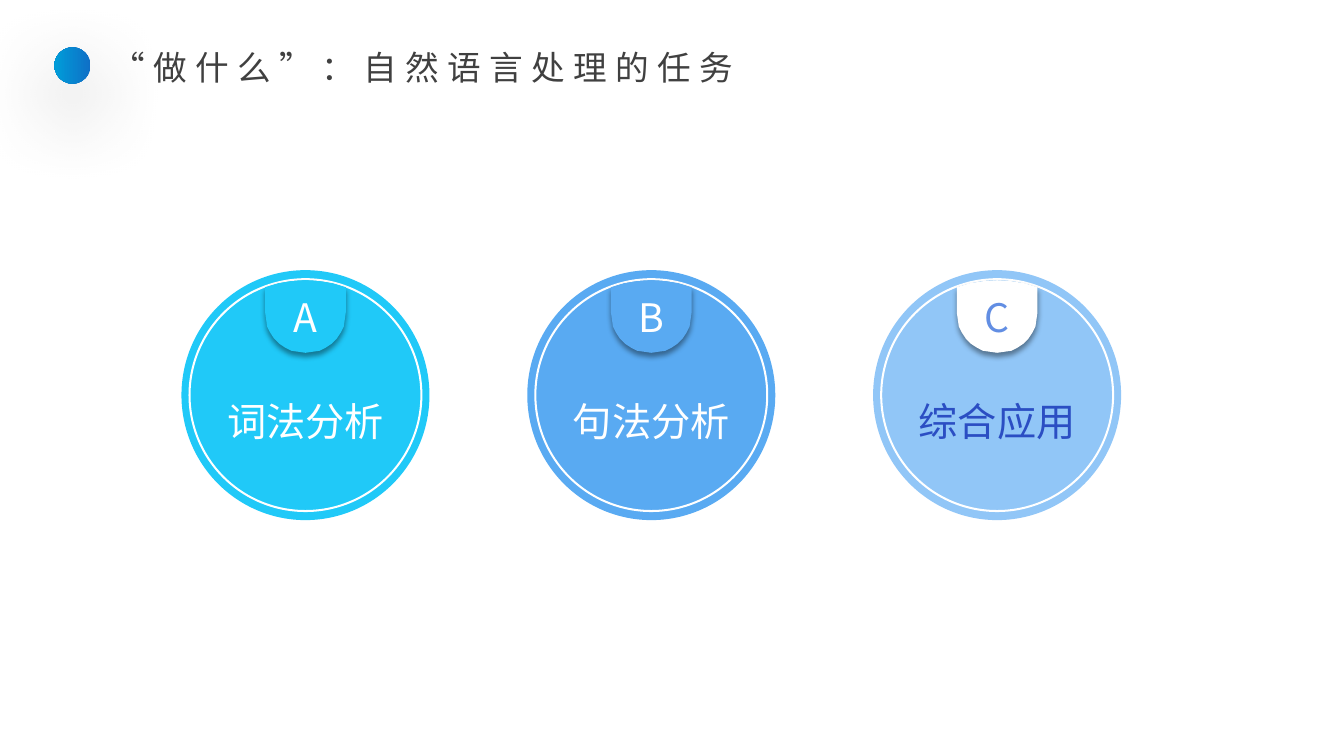
"""Build a slide naming three tasks of natural language processing."""
import math
from dataclasses import dataclass

import pptx
import pptx.dml.color
import pptx.enum.shapes
import pptx.enum.text
import pptx.oxml.ns
import pptx.util
from lxml import etree

SCALE = 9144


@dataclass(frozen=True)
class Theme:
    font: str = "Noto Sans CJK SC"
    title_size: int = 24
    label_size: int = 28
    title: str = "404040"
    white: str = "FFFFFF"
    shadow: str = "000000"
    dot_start: str = "0F6FC6"
    dot_end: str = "009DD9"
    cyan: str = "20C9F8"
    blue: str = "59AAF2"
    pale: str = "91C6F7"
    navy: str = "2B4EC3"
    violet: str = "628EE3"


def rgb(color):
    return pptx.dml.color.RGBColor.from_string(color)


def px(length):
    return pptx.util.Emu(length * SCALE)


def arc(x, y, radius, start, end, steps):
    angles = [math.radians(start + (end - start) * step / steps) for step in range(steps + 1)]
    return [(x + radius * math.cos(angle), y + radius * math.sin(angle)) for angle in angles]


class Painter:
    def __init__(self, page, theme):
        self.page = page
        self.theme = theme

    def add_xml(self, parent, tag, **attributes):
        names = {name: str(value) for name, value in attributes.items()}
        return etree.SubElement(parent, pptx.oxml.ns.qn(tag), names)

    def shadow(self, shape, blur, distance):
        effects = shape._element.spPr.find(pptx.oxml.ns.qn("a:effectLst"))
        outer = self.add_xml(effects, "a:outerShdw", blurRad=pptx.util.Pt(blur),
                             dist=pptx.util.Pt(distance), dir=5400000, algn="t", rotWithShape=0)
        color = self.add_xml(outer, "a:srgbClr", val=self.theme.shadow)
        self.add_xml(color, "a:alpha", val=40000)

    def text(self, shape, words, size, color, align, spacing=0):
        para = shape.text_frame.paragraphs[0]
        para.text = words
        para.alignment = align
        para.font.size = pptx.util.Pt(size)
        para.font.color.rgb = rgb(color)
        para.font.name = self.theme.font
        properties = para._p.pPr.find(pptx.oxml.ns.qn("a:defRPr"))
        self.add_xml(properties, "a:ea", typeface=self.theme.font)
        if spacing:
            for span in para.runs:
                span._r.get_or_add_rPr().set("spc", str(spacing * 100))

    def label(self, shape, words, color, top_inset=5):
        frame = shape.text_frame
        frame.word_wrap = True
        frame.vertical_anchor = pptx.enum.text.MSO_ANCHOR.MIDDLE
        frame.margin_left = frame.margin_right = 0
        frame.margin_top = px(top_inset)
        self.text(shape, words, self.theme.label_size, color, pptx.enum.text.PP_ALIGN.CENTER)

    def paint(self, shape, fill):
        shape.fill.solid()
        shape.fill.fore_color.rgb = rgb(fill)
        shape.line.fill.background()
        shape.shadow.inherit = False

    def title(self, words, left, top, width, height):
        box = self.page.shapes.add_textbox(px(left), px(top), px(width), px(height))
        box.text_frame.word_wrap = True
        box.text_frame.auto_size = pptx.enum.text.MSO_AUTO_SIZE.SHAPE_TO_FIT_TEXT
        self.text(box, words, self.theme.title_size, self.theme.title,
                  pptx.enum.text.PP_ALIGN.JUSTIFY, spacing=6)

    def oval(self, x, y, radius_x, radius_y):
        return self.page.shapes.add_shape(pptx.enum.shapes.MSO_SHAPE.OVAL,
                                          px(x - radius_x), px(y - radius_y),
                                          px(2 * radius_x), px(2 * radius_y))

    def dot(self, x, y, radius):
        shape = self.oval(x, y, radius, radius)
        shape.fill.gradient()
        shape.fill.gradient_angle = 180
        for stop, color in zip(shape.fill.gradient_stops,
                               (self.theme.dot_start, self.theme.dot_end)):
            stop.color.rgb = rgb(color)
        shape.line.fill.background()
        shape.shadow.inherit = False
        self.shadow(shape, blur=60, distance=20)

    def ring(self, x, y, radius):
        shape = self.oval(x, y, radius, radius)
        shape.fill.background()
        shape.line.color.rgb = rgb(self.theme.white)
        shape.line.width = px(2)
        shape.shadow.inherit = False

    def tab(self, x, y, radius, half, fill, letter, color):
        lean = math.degrees(math.asin(half / radius))
        points = (arc(x, y, radius, 270 - lean, 270 + lean, 6)
                  + arc(x, y - 82, half, 0, 180, 18))
        builder = self.page.shapes.build_freeform(*points[0], scale=SCALE)
        builder.add_line_segments(points[1:], close=True)
        shape = builder.convert_to_shape()
        self.paint(shape, fill)
        self.shadow(shape, blur=4, distance=3)
        self.label(shape, letter, color)

    def task(self, x, y, letter, name, disc_fill, name_color, tab_fill, letter_color):
        disc = self.oval(x, y, 123, 124)
        self.paint(disc, disc_fill)
        self.label(disc, name, name_color, top_inset=55)
        self.ring(x, y, 115)
        self.tab(x, y, 114, 40, tab_fill, letter, letter_color)


def main():
    deck = pptx.Presentation()
    deck.slide_width, deck.slide_height = px(1333), px(750)
    theme = Theme()
    painter = Painter(deck.slides.add_slide(deck.slide_layouts[6]), theme)
    painter.dot(72, 65, 18)
    painter.title("“做什么”：自然语言处理的任务", 101, 42, 681, 50)
    tasks = [
        ("A", "词法分析", theme.cyan, theme.white, theme.cyan, theme.white),
        ("B", "句法分析", theme.blue, theme.white, theme.blue, theme.white),
        ("C", "综合应用", theme.pale, theme.navy, theme.white, theme.violet),
    ]
    for index, task in enumerate(tasks):
        painter.task(303 + 343 * index, 392, *task)
    deck.save("out.pptx")


if __name__ == "__main__":
    main()
